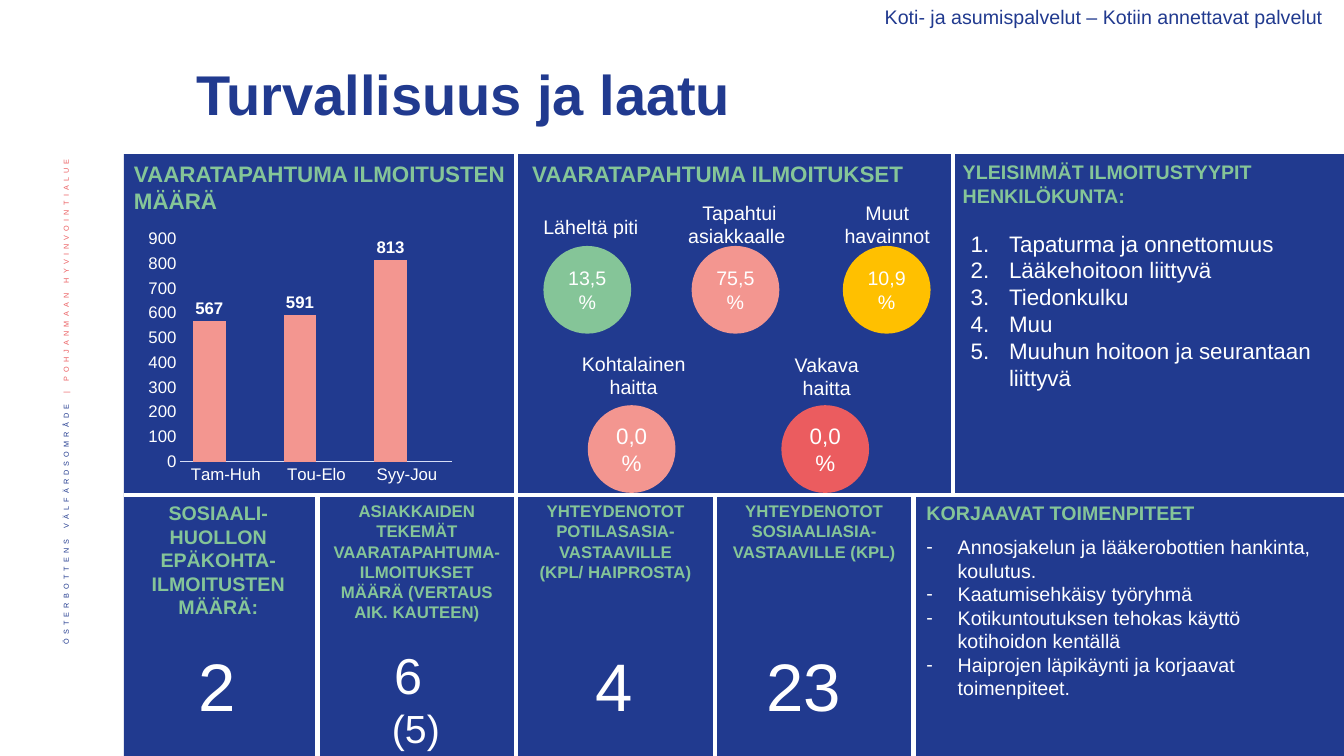
from lxml import etree
from pptx import Presentation
from pptx.chart.data import CategoryChartData
from pptx.dml.color import RGBColor
from pptx.enum.chart import XL_CHART_TYPE as ChartType, XL_LABEL_POSITION as LabelPosition
from pptx.enum.chart import XL_TICK_MARK as TickMark
from pptx.enum.lang import MSO_LANGUAGE_ID as Language
from pptx.enum.shapes import MSO_CONNECTOR as Connector, MSO_SHAPE as Shape
from pptx.enum.text import MSO_ANCHOR as Anchor, MSO_AUTO_SIZE as AutoSize, PP_ALIGN as Align
from pptx.oxml.ns import qn
from pptx.util import Inches, Pt

FONT = "Arial"
COLORS = {"navy": "213A8F", "white": "FFFFFF", "green": "85C598", "salmon": "F39690",
          "yellow": "FFC000", "red": "EB5C5F", "dark red": "D3433F", "axis": "D6DDF6"}

SECTION = "Koti- ja asumispalvelut – Kotiin annettavat palvelut"
TITLE = "Turvallisuus ja laatu"
SIDE_TEXT = [("ÖSTERBOTTENS VÄLFÄRDSOMRÅDE ", "navy"), ("| POHJANMAAN HYVINVOINTIALUE ", "red")]

# text, left, top, width, size
HEADINGS = [
    ("VAARATAPAHTUMA ILMOITUSTEN MÄÄRÄ", 1.23, 1.54, 3.88, 16),
    ("VAARATAPAHTUMA ILMOITUKSET", 5.18, 1.54, 4.25, 16),
    ("YLEISIMMÄT ILMOITUSTYYPIT HENKILÖKUNTA:", 9.45, 1.54, 3.89, 14),
    ("KORJAAVAT TOIMENPITEET", 9.09, 4.92, 4.19, 14),
]
PERIODS = ["Tam-Huh", "Tou-Elo", "Syy-Jou"]
SERIES = [("Series 1", [567, 591, 813], "salmon"), ("Series 2", [None] * 3, "dark red")]

# label, its left, top and width; share, size, colour, circle left and top
SHARES = [
    ("Läheltä piti", 5.22, 2.08, 1.28, "13,5%", 14, "green", 5.39, 2.44),
    ("Tapahtui asiakkaalle ", 6.62, 1.94, 1.43, "75,5 %", 14, "salmon", 6.86, 2.44),
    ("Muut havainnot", 8.1, 1.94, 1.4, "10,9%", 14, "yellow", 8.36, 2.44),
    ("Kohtalainen haitta", 5.53, 3.44, 1.51, "0,0%", 16, "salmon", 5.83, 4.02),
    ("Vakava haitta", 7.56, 3.45, 1.28, "0,0%", 16, "red", 7.75, 4.02),
]
REPORT_TYPES = ["Tapaturma ja onnettomuus", "Lääkehoitoon liittyvä", "Tiedonkulku", "Muu",
                "Muuhun hoitoon ja seurantaan liittyvä"]
ACTIONS = ["Annosjakelun ja lääkerobottien hankinta, koulutus.", "Kaatumisehkäisy työryhmä",
           "Kotikuntoutuksen tehokas käyttö kotihoidon kentällä",
           "Haiprojen läpikäynti ja korjaavat toimenpiteet."]
# heading, heading size, lines of (number, size)
COUNTS = [
    ("SOSIAALI-HUOLLON EPÄKOHTA-ILMOITUSTEN MÄÄRÄ:", 14, [("2", 48)]),
    ("ASIAKKAIDEN TEKEMÄT VAARATAPAHTUMA-ILMOITUKSET MÄÄRÄ (VERTAUS AIK. KAUTEEN)", 12,
     [("6 ", 36), ("(5)", 28)]),
    ("YHTEYDENOTOT POTILASASIA-VASTAAVILLE (KPL/\u00a0HAIPROSTA)", 12, [("4", 48)]),
    ("YHTEYDENOTOT SOSIAALIASIA-VASTAAVILLE (KPL)", 12, [("23 ", 48)]),
]

WIDTH, HEIGHT = 13.33, 7.5
PANEL_LEFT, PANEL_TOP, MIDDLE = 1.23, 1.53, 4.91
COLUMN_LEFT, COLUMN = 1.18, 1.97
UPPER_DIVIDERS = [COLUMN_LEFT + 2 * COLUMN, 9.45]
LOWER_DIVIDERS = [COLUMN_LEFT + COLUMN * i for i in range(1, 5)]
DIVIDERS = ([(PANEL_LEFT, MIDDLE, WIDTH, MIDDLE)]
            + [(x, PANEL_TOP, x, MIDDLE) for x in UPPER_DIVIDERS]
            + [(x, MIDDLE, x, HEIGHT) for x in LOWER_DIVIDERS])


def rgb(name):
    return RGBColor.from_string(COLORS[name])


def style(font, size, color, bold=False):
    font.name, font.size, font.bold = FONT, Pt(size), bold
    font.color.rgb = rgb(color)


def add_run(paragraph, text, size, color, bold=False):
    run = paragraph.add_run()
    run.text = text
    style(run.font, size, color, bold)
    run.font.language_id = Language.FINNISH
    return run


def add_text(slide, box, lines, color, bold=False, align=Align.LEFT, bullet=None, indent=0):
    """Add a text box of (text, size) lines; bullet is a tag with its attributes."""
    shape = slide.shapes.add_textbox(*map(Inches, box))
    frame = shape.text_frame
    frame.word_wrap = True
    frame.auto_size = AutoSize.SHAPE_TO_FIT_TEXT
    for i, (text, size) in enumerate(lines):
        paragraph = frame.paragraphs[0] if i == 0 else frame.add_paragraph()
        paragraph.alignment = align
        if bullet:
            tag, attributes = bullet
            properties = paragraph._p.get_or_add_pPr()
            properties.set("marL", str(Inches(indent)))
            properties.set("indent", str(-Inches(indent)))
            etree.SubElement(properties, qn("a:buFont"), typeface=FONT)
            etree.SubElement(properties, qn(tag), **attributes)
        add_run(paragraph, text, size, color, bold)
    return shape


def add_filled(slide, kind, box, color):
    shape = slide.shapes.add_shape(kind, *map(Inches, box))
    shape.shadow.inherit = False
    shape.fill.solid()
    shape.fill.fore_color.rgb = rgb(color)
    shape.line.fill.background()
    return shape


def add_divider(slide, ends):
    line = slide.shapes.add_connector(Connector.STRAIGHT, *map(Inches, ends))
    line.line.color.rgb = rgb("white")
    line.line.width = Pt(3)
    etree.SubElement(line._element.spPr, qn("a:effectLst"))


def add_side_text(slide):
    shape = slide.shapes.add_textbox(*map(Inches, (0.42, 1.42, 0.52, 5.73)))
    frame = shape.text_frame
    frame.word_wrap = True
    frame.vertical_anchor = Anchor.MIDDLE
    frame._txBody.bodyPr.set("vert", "vert270")
    paragraph = frame.paragraphs[0]
    paragraph.alignment = Align.RIGHT
    paragraph.line_spacing = 0.9
    for text, color in SIDE_TEXT:
        properties = add_run(paragraph, text, 9, color)._r.get_or_add_rPr()
        properties.set("baseline", "30000")
        properties.set("spc", "300")


def add_report_chart(slide):
    data = CategoryChartData()
    data.categories = PERIODS
    for name, values, _ in SERIES:
        data.add_series(name, values)
    box = map(Inches, (1.41, 2.23, 3.14, 2.62))
    chart = slide.shapes.add_chart(ChartType.COLUMN_CLUSTERED, *box, data).chart
    style(chart.font, 10, "navy")
    chart.has_legend = chart.has_title = False
    for axis in (chart.category_axis, chart.value_axis):
        axis.major_tick_mark = axis.minor_tick_mark = TickMark.NONE
        axis.has_major_gridlines = False
        style(axis.tick_labels.font, 12, "white")
    chart.category_axis.format.line.color.rgb = rgb("axis")
    chart.category_axis.format.line.width = Pt(0.75)
    chart.value_axis.format.line.fill.background()
    chart.value_axis.minimum_scale, chart.value_axis.maximum_scale = 0, 900
    chart.value_axis.major_unit = 100
    plot = chart.plots[0]
    plot.gap_width, plot.overlap, plot.vary_by_categories = 75, 0, False
    for series, (_, _, color) in zip(plot.series, SERIES):
        series.format.fill.solid()
        series.format.fill.fore_color.rgb = rgb(color)
        labels = series.data_labels
        labels.show_value = True
        labels.position = LabelPosition.OUTSIDE_END
        style(labels.font, 12, "white", True)


def add_share(slide, label, left, top, width, share, size, color, circle_left, circle_top):
    add_text(slide, (left, top, width, circle_top - top), [(label, 14)], "white",
             align=Align.CENTER)
    circle = add_filled(slide, Shape.OVAL, (circle_left, circle_top, 0.87, 0.87), color)
    circle.text_frame.vertical_anchor = Anchor.MIDDLE
    paragraph = circle.text_frame.paragraphs[0]
    paragraph.alignment = Align.CENTER
    add_run(paragraph, share, size, "white")


def main():
    presentation = Presentation()
    presentation.slide_width, presentation.slide_height = Inches(WIDTH), Inches(HEIGHT)
    slide = presentation.slides.add_slide(presentation.slide_layouts[6])

    add_side_text(slide)
    panel = (PANEL_LEFT, PANEL_TOP, WIDTH - PANEL_LEFT, HEIGHT - PANEL_TOP)
    add_filled(slide, Shape.RECTANGLE, panel, "navy")
    for ends in DIVIDERS:
        add_divider(slide, ends)

    title = add_text(slide, (1.85, 0.47, 9.98, 0.99), [(TITLE, 40)], "navy", True)
    title.text_frame.auto_size = AutoSize.NONE
    title.text_frame.vertical_anchor = Anchor.MIDDLE
    title.text_frame.paragraphs[0].line_spacing = 0.9
    add_text(slide, (7.36, 0, 5.86, 0.34), [(SECTION, 14)], "navy", align=Align.RIGHT)

    for text, left, top, width, size in HEADINGS:
        add_text(slide, (left, top, width, 0.37), [(text, size)], "green", True)
    add_report_chart(slide)
    for share in SHARES:
        add_share(slide, *share)
    add_text(slide, (9.53, 2.23, 3.74, 1.99), [(text, 16) for text in REPORT_TYPES], "white",
             bullet=("a:buAutoNum", {"type": "arabicPeriod"}), indent=0.38)
    add_text(slide, (9.09, 5.26, 4.19, 2.2), [(text, 14) for text in ACTIONS], "white",
             bullet=("a:buChar", {"char": "-"}), indent=0.31)

    for i, (heading, size, numbers) in enumerate(COUNTS):
        left = COLUMN_LEFT + COLUMN * i
        add_text(slide, (left + 0.03, 4.92, 1.91, 1.28), [(heading, size)], "green", True,
                 Align.CENTER)
        add_text(slide, (left - 0.01, 6.34, COLUMN, 0.91), numbers, "white",
                 align=Align.CENTER)
    presentation.save("out.pptx")


if __name__ == "__main__":
    main()
